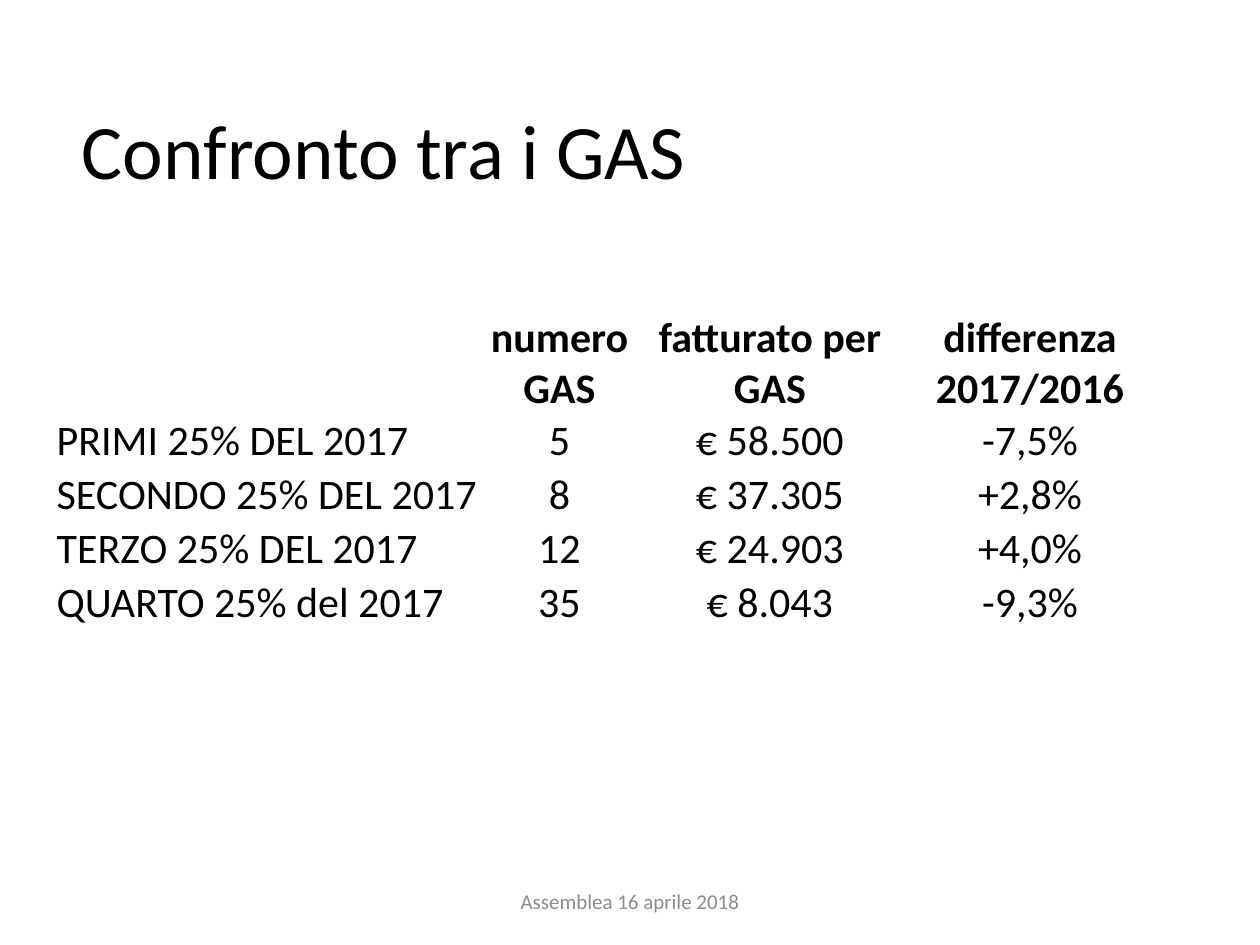
from dataclasses import dataclass

from pptx import Presentation
from pptx.dml.color import RGBColor
from pptx.enum.text import MSO_ANCHOR, PP_ALIGN
from pptx.util import Inches, Pt


@dataclass(frozen=True)
class Theme:
    font: str = "Calibri"
    ink: str = "000000"
    grey: str = "8C8C8C"
    title: int = 44
    body: int = 24
    foot: int = 12


@dataclass(frozen=True)
class Row:
    label: str
    count: str
    sales: str
    change: str
    high: float = 0.43
    bold: bool = False

    def cells(self) -> tuple[str, ...]:
        return self.label, self.count, self.sales, self.change


@dataclass(frozen=True)
class Box:
    left: float
    top: float
    width: float
    height: float

    def span(self) -> tuple[int, ...]:
        return tuple(Inches(n) for n in (self.left, self.top, self.width, self.height))


THEME = Theme()
WIDTHS = (3.4, 1.2, 2.14, 1.99)
ROWS = (
    Row("", "numero GAS", "fatturato per GAS", "differenza 2017/2016", 0.77, True),
    Row("PRIMI 25% DEL 2017", "5", "€ 58.500", "-7,5%"),
    Row("SECONDO 25% DEL 2017", "8", "€ 37.305", "+2,8%"),
    Row("TERZO 25% DEL 2017", "12", "€ 24.903", "+4,0%"),
    Row("QUARTO 25% del 2017", "35", "€ 8.043", "-9,3%"),
)


def write(frame, text: str, *, size: int, color: str = THEME.ink, bold: bool = False,
          align=PP_ALIGN.LEFT, space: float = 1.0) -> None:
    frame.word_wrap = True
    para = frame.paragraphs[0]
    para.alignment = align
    para.line_spacing = space
    font = para.font
    if text:
        run = para.add_run()
        run.text = text
        font = run.font
    font.name = THEME.font
    font.size = Pt(size)
    font.bold = bold
    font.color.rgb = RGBColor.from_string(color)


def add_title(slide, text: str, box: Box) -> None:
    title = slide.shapes.title
    title.left, title.top, title.width, title.height = box.span()
    title.text_frame.vertical_anchor = MSO_ANCHOR.MIDDLE
    write(title.text_frame, text, size=THEME.title, space=0.9)


def add_foot(slide, text: str, box: Box) -> None:
    frame = slide.shapes.add_textbox(*box.span()).text_frame
    frame.vertical_anchor = MSO_ANCHOR.MIDDLE
    write(frame, text, size=THEME.foot, color=THEME.grey, align=PP_ALIGN.CENTER)


def add_grid(slide, rows: tuple[Row, ...], left: float, top: float) -> None:
    box = Box(left, top, sum(WIDTHS), sum(row.high for row in rows))
    table = slide.shapes.add_table(len(rows), len(WIDTHS), *box.span()).table
    table.first_row = table.horz_banding = False
    for col, width in zip(table.columns, WIDTHS):
        col.width = Inches(width)
    for r, row in enumerate(rows):
        table.rows[r].height = Inches(row.high)
        for c, text in enumerate(row.cells()):
            cell = table.cell(r, c)
            cell.fill.background()
            cell.vertical_anchor = MSO_ANCHOR.MIDDLE
            cell.margin_left = cell.margin_right = cell.margin_top = Inches(0.01)
            cell.margin_bottom = 0
            write(cell.text_frame, text, size=THEME.body, bold=row.bold,
                  align=PP_ALIGN.CENTER if c else PP_ALIGN.LEFT)


def main() -> None:
    deck = Presentation()
    deck.slide_width, deck.slide_height = Inches(10), Inches(7.5)
    slide = deck.slides.add_slide(deck.slide_layouts[5])
    add_title(slide, "Confronto tra i GAS", Box(0.55, 0.68, 9.05, 1.09))
    add_foot(slide, "Assemblea 16 aprile 2018", Box(3.31, 6.95, 3.38, 0.4))
    add_grid(slide, ROWS, 0.44, 2.47)
    deck.save("out.pptx")


if __name__ == "__main__":
    main()
